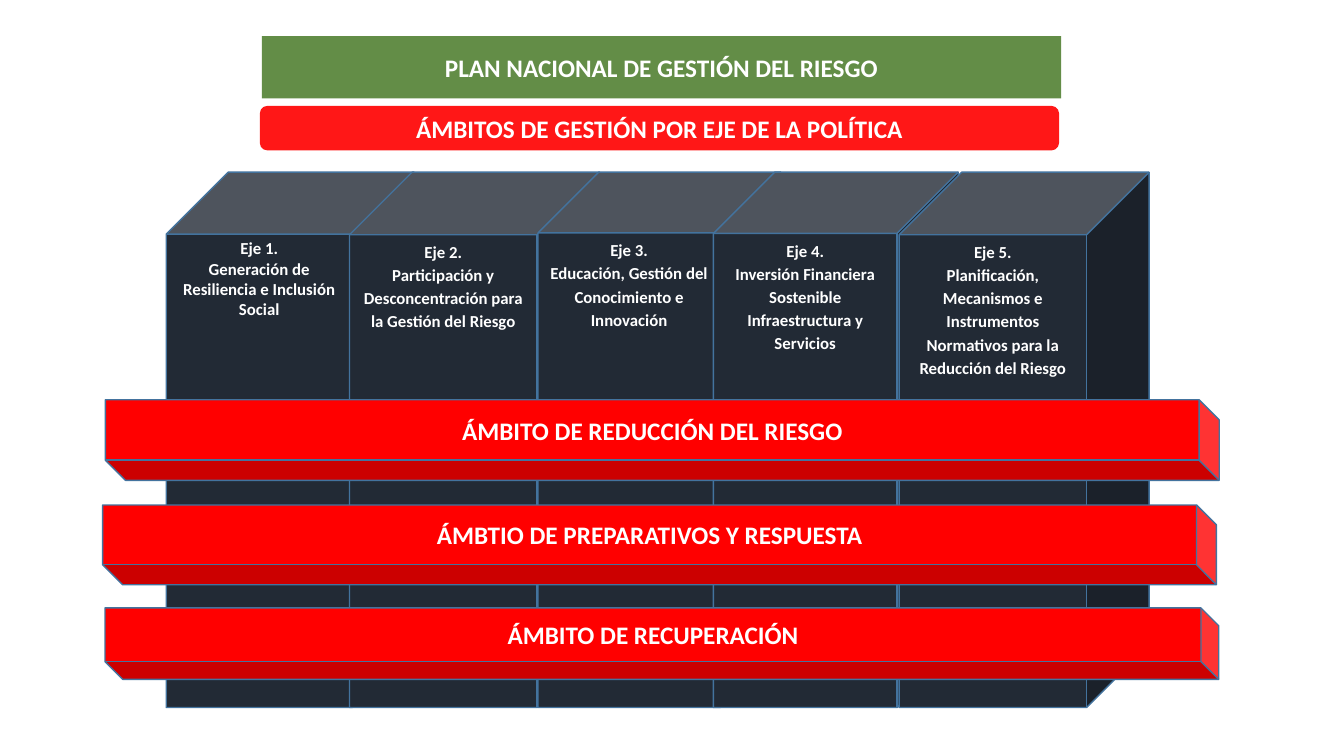
from lxml.etree import SubElement
from pptx import Presentation
from pptx.dml.color import RGBColor
from pptx.enum.shapes import MSO_SHAPE as Shape
from pptx.enum.text import MSO_ANCHOR as Anchor, MSO_AUTO_SIZE as AutoSize, PP_ALIGN as Align
from pptx.oxml.ns import qn
from pptx.util import Cm, Pt

WHITE = RGBColor(0xFF, 0xFF, 0xFF)
GREEN = RGBColor(0x54, 0x82, 0x35)
RED = RGBColor(0xFF, 0x00, 0x00)
NAVY = RGBColor(0x22, 0x2A, 0x35)
EDGE = RGBColor(0x43, 0x73, 0x9E)

COLUMN_TOP, COLUMN_HEIGHT = 4.34, 13.49
BAR_LENGTH = 28.07
BANNER_WIDTH = 20.14

AXES = [
    (4.19, 6.25, 1.0, "Eje 1.\nGeneración de Resiliencia e Inclusión Social"),
    (8.81, 6.30, 1.15, "Eje 2.\nParticipación y Desconcentración para la Gestión del Riesgo"),
    (13.56, 6.12, 1.15, "Eje 3.\nEducación, Gestión del Conocimiento e Innovación"),
    (17.98, 6.17, 1.15, "Eje 4.\nInversión Financiera Sostenible Infraestructura y Servicios"),
    (22.66, 6.30, 1.15, "Eje 5.\nPlanificación, Mecanismos e Instrumentos Normativos "
                        "para la Reducción del Riesgo"),
]
SCOPES = [
    (16.69, 11.09, 2.03, "ÁMBITO DE REDUCCIÓN DEL RIESGO"),
    (16.62, 13.73, 2.01, "ÁMBTIO DE PREPARATIVOS Y RESPUESTA"),
    (16.68, 16.22, 1.80, "ÁMBITO DE RECUPERACIÓN"),
]


class Diagram:
    font_name = "Calibri"
    heading_size = Pt(18)
    body_size = Pt(12)

    def __init__(self, slide):
        self.slide = slide

    def label(self, shape, text, size, anchor, spacing=1.0):
        frame = shape.text_frame
        frame.text = text
        frame.word_wrap = True
        frame.auto_size = AutoSize.NONE
        frame.vertical_anchor = anchor
        frame.margin_left = frame.margin_right = Cm(0.19)
        frame.margin_top = frame.margin_bottom = Cm(0.1)
        for paragraph in frame.paragraphs:
            paragraph.alignment = Align.CENTER
            paragraph.line_spacing = spacing
            for run in paragraph.runs:
                run.font.name = self.font_name
                run.font.size = size
                run.font.bold = True
                run.font.color.rgb = WHITE

    def paint_banner(self, shape, color, text):
        shape.fill.solid()
        shape.fill.fore_color.rgb = color
        color_element = shape._element.spPr.find(".//" + qn("a:srgbClr"))
        SubElement(color_element, qn("a:alpha"), val="91000")
        shape.line.fill.background()
        self.label(shape, text, self.heading_size, Anchor.MIDDLE)

    def title(self, left, top, height, color, text):
        title = self.slide.shapes.title
        title.left, title.top = Cm(left), Cm(top)
        title.width, title.height = Cm(BANNER_WIDTH), Cm(height)
        geometry = SubElement(title._element.spPr, qn("a:prstGeom"), prst="roundRect")
        SubElement(geometry, qn("a:avLst"))
        self.paint_banner(title, color, text)

    def banner(self, left, top, height, color, text):
        shape = self.slide.shapes.add_shape(
            Shape.ROUNDED_RECTANGLE, Cm(left), Cm(top), Cm(BANNER_WIDTH), Cm(height))
        shape.shadow.inherit = False
        self.paint_banner(shape, color, text)

    def cube(self, left, top, width, height, color):
        shape = self.slide.shapes.add_shape(
            Shape.CUBE, Cm(left), Cm(top), Cm(width), Cm(height))
        shape.shadow.inherit = False
        shape.fill.solid()
        shape.fill.fore_color.rgb = color
        shape.line.color.rgb = EDGE
        shape.line.width = Pt(1)
        return shape

    def column(self, left, width, spacing, text):
        shape = self.cube(left, COLUMN_TOP, width, COLUMN_HEIGHT, NAVY)
        self.label(shape, text, self.body_size, Anchor.TOP, spacing)

    def bar(self, center_x, center_y, thickness, text):
        shape = self.cube(center_x - thickness / 2, center_y - BAR_LENGTH / 2,
                          thickness, BAR_LENGTH, RED)
        shape.rotation = 90
        self.label(shape, text, self.heading_size, Anchor.MIDDLE)
        shape.text_frame._txBody.bodyPr.set("vert", "vert270")


def main():
    presentation = Presentation()
    presentation.slide_width, presentation.slide_height = Cm(33.87), Cm(19.05)
    diagram = Diagram(presentation.slides.add_slide(presentation.slide_layouts[5]))
    diagram.title(6.6, 0.91, 1.57, GREEN, "PLAN NACIONAL DE GESTIÓN DEL RIESGO")
    diagram.banner(6.55, 2.67, 1.12, RED, "ÁMBITOS DE GESTIÓN POR EJE DE LA POLÍTICA")
    for axis in AXES:
        diagram.column(*axis)
    for scope in SCOPES:
        diagram.bar(*scope)
    presentation.save("out.pptx")


if __name__ == "__main__":
    main()
